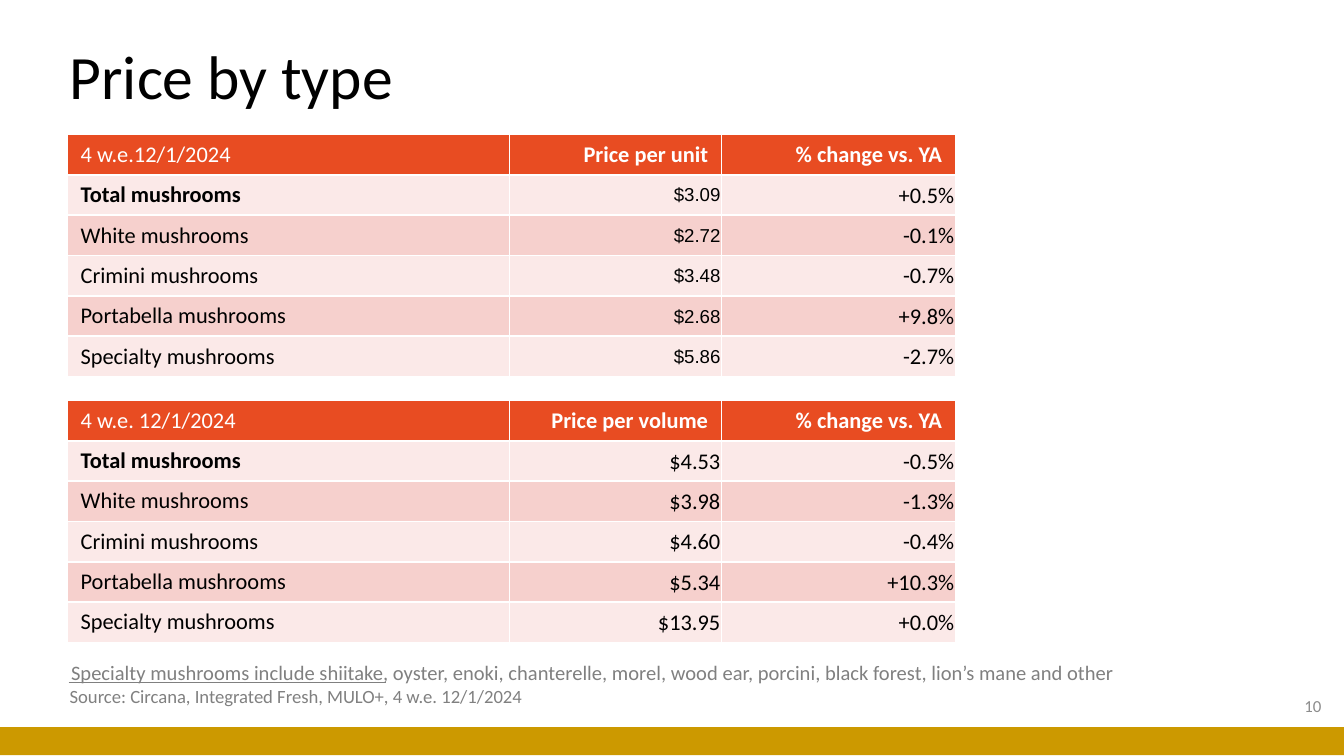
import dataclasses

import lxml.etree
import pptx
import pptx.dml.color
import pptx.enum.shapes
import pptx.enum.text
import pptx.oxml
import pptx.oxml.ns
import pptx.util

Inches = pptx.util.Inches
Pt = pptx.util.Pt
Align = pptx.enum.text.PP_ALIGN
Anchor = pptx.enum.text.MSO_ANCHOR
qn = pptx.oxml.ns.qn


@dataclasses.dataclass(frozen=True)
class Theme:
    font: str = "Calibri"
    number_font: str = "Arial"
    black: str = "000000"
    white: str = "FFFFFF"
    gray: str = "808080"
    page_gray: str = "8C8C8C"
    gold: str = "CC9900"
    header: str = "E84C22"
    bands: tuple = ("FBE9E8", "F6D0CD")
    title_size: int = 33
    table_size: int = 12
    number_size: int = 10
    note_size: int = 11
    source_size: int = 10
    page_size: int = 9


THEME = Theme()
COLUMN_WIDTHS = (3.29, 1.58, 1.74)
ROW_HEIGHT = 0.3
HEADER_MARGINS = {"margin_top": Inches(0.05), "margin_bottom": Inches(0.04)}
VALUE_MARGINS = {"margin_left": Inches(0.01), "margin_right": Inches(0.01),
                 "margin_top": Inches(0.01), "margin_bottom": 0}
MUSHROOMS = ("Total", "White", "Crimini", "Portabella", "Specialty")
UNIT_PRICES = (("$3.09", "+0.5%"), ("$2.72", "-0.1%"), ("$3.48", "-0.7%"),
               ("$2.68", "+9.8%"), ("$5.86", "-2.7%"))
VOLUME_PRICES = (("$4.53", "-0.5%"), ("$3.98", "-1.3%"), ("$4.60", "-0.4%"),
                 ("$5.34", "+10.3%"), ("$13.95", "+0.0%"))


def rgb(color):
    return pptx.dml.color.RGBColor.from_string(color)


def apply_format(target, values):
    for name, value in values.items():
        setattr(target, name, value)


def write_text(frame, text, size, color, align=Align.LEFT, bold=False, font=THEME.font):
    paragraph = frame.paragraphs[0]
    paragraph.alignment = align
    run = paragraph.add_run()
    run.text = text
    apply_format(run.font, {"name": font, "size": Pt(size), "bold": bold})
    run.font.color.rgb = rgb(color)
    return paragraph


def add_text(slide, box, text, size, color, align=Align.LEFT, anchor=Anchor.TOP):
    frame = slide.shapes.add_textbox(*map(Inches, box)).text_frame
    apply_format(frame, {"word_wrap": True, "vertical_anchor": anchor})
    return write_text(frame, text, size, color, align)


def add_bar(slide, box, color):
    bar = slide.shapes.add_shape(
        pptx.enum.shapes.MSO_SHAPE.RECTANGLE, *map(Inches, box))
    bar.shadow.inherit = False
    bar.fill.solid()
    bar.fill.fore_color.rgb = rgb(color)
    bar.line.fill.background()


def add_rule(slide, left, right, top):
    rule = slide.shapes.add_connector(
        pptx.enum.shapes.MSO_CONNECTOR.STRAIGHT,
        Inches(left), Inches(top), Inches(right), Inches(top))
    rule.line.color.rgb = rgb(THEME.gray)
    rule.line.width = Pt(0.5)
    lxml.etree.SubElement(rule._element.spPr, qn("a:effectLst"))


def style_cell(cell, fill, format_values):
    properties = cell._tc.get_or_add_tcPr()
    for side in ("lnL", "lnR", "lnT", "lnB"):
        border = lxml.etree.SubElement(properties, qn(f"a:{side}"), w=str(Pt(1)))
        solid = lxml.etree.SubElement(border, qn("a:solidFill"))
        lxml.etree.SubElement(solid, qn("a:srgbClr"), val=THEME.white)
    cell.fill.solid()
    cell.fill.fore_color.rgb = rgb(fill)
    apply_format(cell, format_values)


def fill_header(table, headings):
    for column, heading in enumerate(headings):
        cell = table.cell(0, column)
        style_cell(cell, THEME.header, HEADER_MARGINS)
        write_text(cell.text_frame, heading, THEME.table_size, THEME.white,
                   Align.RIGHT if column else Align.LEFT, bold=column > 0)


def fill_row(table, row, name, values, price_style, label_margin):
    band = THEME.bands[(row - 1) % 2]
    label = table.cell(row, 0)
    style_cell(label, band, {"vertical_anchor": Anchor.MIDDLE,
                             "margin_top": Inches(label_margin),
                             "margin_bottom": Inches(label_margin)})
    write_text(label.text_frame, f"{name} mushrooms", THEME.table_size,
               THEME.black, bold=row == 1)
    styles = (price_style, (THEME.font, THEME.table_size))
    for column, (value, (font, size)) in enumerate(zip(values, styles), start=1):
        cell = table.cell(row, column)
        style_cell(cell, band, {"vertical_anchor": Anchor.MIDDLE, **VALUE_MARGINS})
        write_text(cell.text_frame, value, size, THEME.black, Align.RIGHT, font=font)


def add_price_table(slide, top, headings, prices, price_style, label_margin):
    row_count = len(prices) + 1
    table = slide.shapes.add_table(
        row_count, len(COLUMN_WIDTHS), Inches(0.5), Inches(top),
        Inches(sum(COLUMN_WIDTHS)), Inches(row_count * ROW_HEIGHT)).table
    for column, width in zip(table.columns, COLUMN_WIDTHS):
        column.width = Inches(width)
    for row in table.rows:
        row.height = Inches(ROW_HEIGHT)
    fill_header(table, headings)
    for row, (name, values) in enumerate(zip(MUSHROOMS, prices), start=1):
        fill_row(table, row, name, values, price_style, label_margin)


def main():
    presentation = pptx.Presentation()
    presentation.slide_width = Inches(10)
    presentation.slide_height = Inches(10 * 9 / 16)
    slide = presentation.slides.add_slide(presentation.slide_layouts[6])

    add_bar(slide, (0, 5.41, 10, 0.21), THEME.gold)
    title = add_text(slide, (0.42, 0.05, 8.62, 1.09), "Price by type",
                     THEME.title_size, THEME.black, anchor=Anchor.MIDDLE)
    title.line_spacing = 0.9
    add_text(slide, (7.68, 5.1, 2.25, 0.3), "10", THEME.page_size,
             THEME.page_gray, Align.RIGHT, Anchor.MIDDLE)
    add_rule(slide, 0.51, 2.87, 5.08)
    add_price_table(slide, 1, ("4 w.e.12/1/2024", "Price per unit", "% change vs. YA"),
                    UNIT_PRICES, (THEME.number_font, THEME.number_size), 0.05)
    add_text(slide, (0.42, 5.05, 3.65, 0.27),
             "Source: Circana, Integrated Fresh, MULO+, 4 w.e. 12/1/2024",
             THEME.source_size, THEME.gray)
    add_text(slide, (0.43, 4.86, 8.28, 0.29),
             "Specialty mushrooms include shiitake, oyster, enoki, chanterelle, morel, "
             "wood ear, porcini, black forest, lion’s mane and other",
             THEME.note_size, THEME.gray)
    add_price_table(slide, 2.98, ("4 w.e. 12/1/2024", "Price per volume", "% change vs. YA"),
                    VOLUME_PRICES, (THEME.font, THEME.table_size), 0.04)
    presentation.save("out.pptx")


if __name__ == "__main__":
    main()
